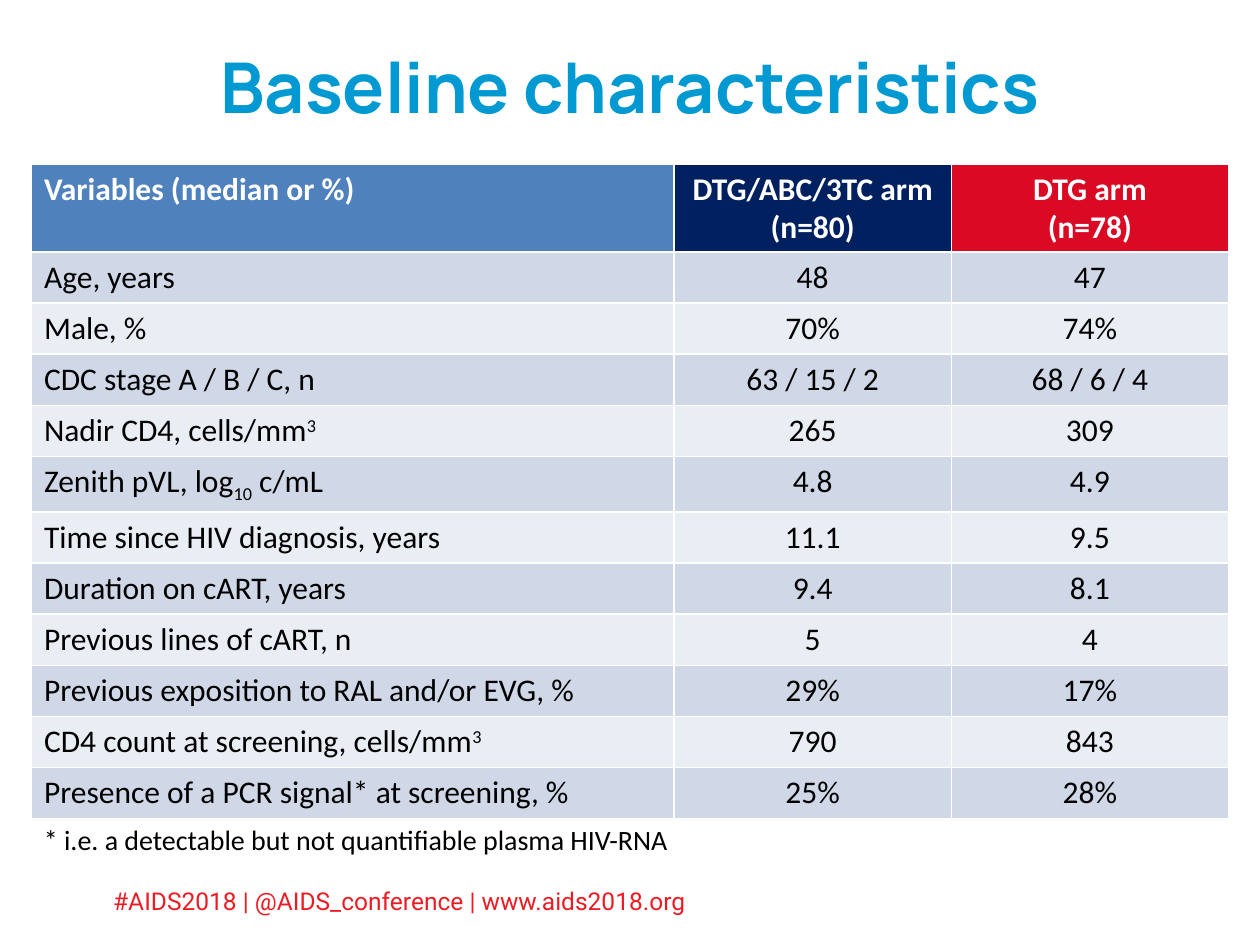
"""Build the baseline characteristics slide with its table, footnote and footer."""
from pptx import Presentation
from pptx.dml.color import RGBColor
from pptx.enum.text import MSO_ANCHOR as ANCHOR, PP_ALIGN as ALIGN
from pptx.util import Pt

WHITE = RGBColor(0xFF, 0xFF, 0xFF)
BLACK = RGBColor(0, 0, 0)
TITLE_BLUE = RGBColor(0x00, 0x99, 0xD2)
FOOTER_RED = RGBColor(0xED, 0x1C, 0x24)
HEADER_FILLS = [RGBColor(0x4F, 0x81, 0xBD), RGBColor(0x00, 0x20, 0x60), RGBColor(0xDA, 0x0A, 0x24)]
BAND_FILLS = [RGBColor(0xD0, 0xD8, 0xE8), RGBColor(0xE9, 0xED, 0xF4)]

SUPER, SUB = 30000, -25000
TITLE = "Baseline characteristics"
FOOTNOTE = "* i.e. a detectable but not quantifiable plasma HIV-RNA"
FOOTER = "#AIDS2018 | @AIDS_conference | www.aids2018.org"
HEADER = ["Variables (median or %)", "DTG/ABC/3TC arm\n(n=80)", "DTG arm\n(n=78)"]
ROWS = [
    ("Age, years", "48", "47"),
    ("Male, %", "70%", "74%"),
    ("CDC stage A / B / C, n", "63 / 15 / 2", "68 / 6 / 4"),
    ([("Nadir CD4, cells/mm", 0), ("3", SUPER)], "265", "309"),
    ([("Zenith pVL, log", 0), ("10", SUB), (" c/mL", 0)], "4.8", "4.9"),
    ("Time since HIV diagnosis, years", "11.1", "9.5"),
    ("Duration on cART, years", "9.4", "8.1"),
    ("Previous lines of cART, n", "5", "4"),
    ("Previous exposition to RAL and/or EVG, %", "29%", "17%"),
    ([("CD4 count at screening, cells/mm", 0), ("3", SUPER)], "790", "843"),
    ("Presence of a PCR signal* at screening, %", "25%", "28%"),
]
COL_WIDTHS = [367.2, 158.4, 158.4]
HEADER_H, ROW_H = 50.4, 29.2
LEFT, TOP = 18, 93.6


def write(tf, text, size=18, font="Calibri", color=BLACK, bold=False, align=ALIGN.LEFT):
    lines = [[(line, 0)] for line in text.split("\n")] if isinstance(text, str) else [text]
    for i, runs in enumerate(lines):
        p = tf.add_paragraph() if i else tf.paragraphs[0]
        p.alignment = align
        for part, baseline in runs:
            r = p.add_run()
            r.text = part
            r.font.size, r.font.name, r.font.bold = Pt(size), font, bold
            r.font.color.rgb = color
            if baseline:
                r.font._element.set("baseline", str(baseline))


def add_text(s, box, text, wrap=True, anchor=ANCHOR.TOP, **style):
    tf = s.shapes.add_textbox(*map(Pt, box)).text_frame
    tf.word_wrap = wrap
    tf.vertical_anchor = anchor
    write(tf, text, **style)


def add_baseline_table(s):
    height = HEADER_H + ROW_H * len(ROWS)
    frame = s.shapes.add_table(len(ROWS) + 1, len(HEADER), Pt(LEFT), Pt(TOP),
                               Pt(sum(COL_WIDTHS)), Pt(height))
    table = frame.table
    for col, width in zip(table.columns, COL_WIDTHS):
        col.width = Pt(width)
    for i, values in enumerate([HEADER, *ROWS]):
        is_header = i == 0
        table.rows[i].height = Pt(HEADER_H if is_header else ROW_H)
        for j, value in enumerate(values):
            cell = table.cell(i, j)
            cell.fill.solid()
            cell.fill.fore_color.rgb = HEADER_FILLS[j] if is_header else BAND_FILLS[(i - 1) % 2]
            write(cell.text_frame, value, color=WHITE if is_header else BLACK,
                  bold=is_header, align=ALIGN.CENTER if j else ALIGN.LEFT)


def main():
    prs = Presentation()
    prs.slide_width, prs.slide_height = Pt(720), Pt(540)
    s = prs.slides.add_slide(prs.slide_layouts[6])
    add_text(s, (57.6, 502.6, 522.7, 24.5), FOOTER, size=14, font="Roboto", color=FOOTER_RED)
    add_text(s, (36, 3.6, 648, 90), TITLE, anchor=ANCHOR.MIDDLE, size=40, font="Manrope",
             color=TITLE_BLUE, bold=True, align=ALIGN.CENTER)
    add_baseline_table(s)
    add_text(s, (LEFT, 466.6, 375.1, 26.6), FOOTNOTE, wrap=False, size=16)
    prs.save("out.pptx")


if __name__ == "__main__":
    main()
